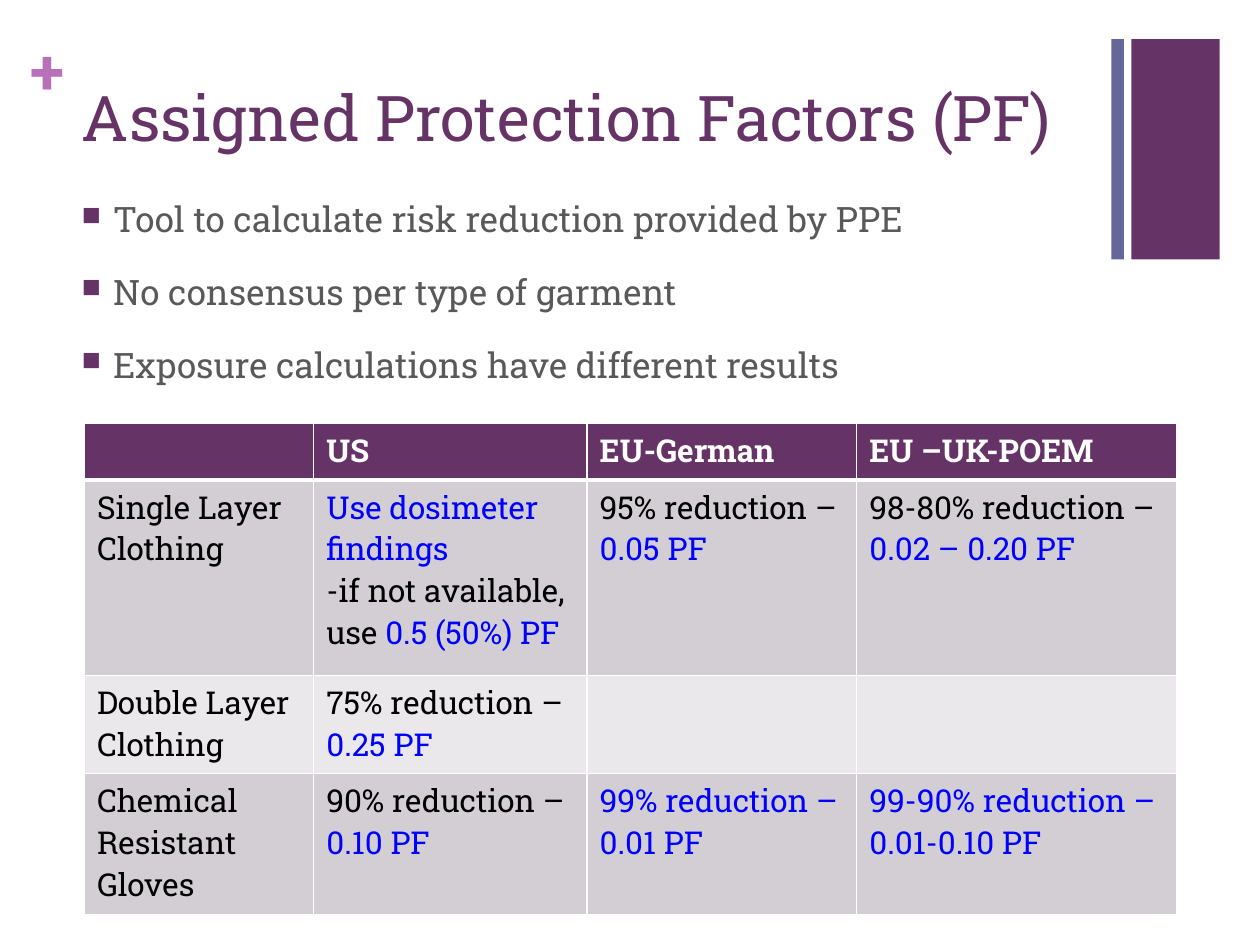
from lxml.etree import SubElement
from pptx import Presentation
from pptx.dml.color import RGBColor as Color
from pptx.enum.shapes import MSO_SHAPE as Shape
from pptx.enum.text import MSO_ANCHOR as Anchor, PP_ALIGN as Align
from pptx.oxml.ns import qn
from pptx.util import Inches, Pt

THEME = dict(
    font="Roboto Slab", purple="663366", slate="666699", orchid="B870B8",
    gray="595959", black="000000", blue="0000FF", white="FFFFFF",
    band_dark="D3CED3", band_light="EAE8EA",
    title=36, bullet=20, cell=18,
)

# Content: a cell is a list of paragraphs, a paragraph a list of (text, colour)
TITLE = "Assigned Protection Factors (PF)"
BULLETS = [
    "Tool to calculate risk reduction provided by PPE",
    "No consensus per type of garment",
    "Exposure calculations have different results",
]
HEADERS = ["", "US", "EU-German", "EU –UK-POEM"]
ROWS = [
    [
        [[("Single Layer Clothing", "black")]],
        [[("Use dosimeter findings", "blue")],
         [("-if not available, use ", "black"), ("0.5 (50%) PF", "blue")]],
        [[("95% reduction – ", "black"), ("0.05 PF", "blue")]],
        [[("98-80% reduction – ", "black"), ("0.02 – 0.20 PF", "blue")]],
    ],
    [
        [[("Double Layer Clothing", "black")]],
        [[("75% reduction – ", "black"), ("0.25 PF", "blue")]],
        [],
        [],
    ],
    [
        [[("Chemical Resistant Gloves", "black")]],
        [[("90% reduction – ", "black"), ("0.10 PF", "blue")]],
        [[("99% reduction – 0.01 PF", "blue")]],
        [[("99-90% reduction – 0.01-0.10 PF", "blue")]],
    ],
]
COLUMN_WIDTHS = [1.82, 2.17, 2.14, 2.54]
ROW_HEIGHTS = [0.45, 1.55, 0.78, 1.12]
BARS = [(8.98, 0.7, "purple"), (8.82, 0.1, "slate")]  # left, width, colour


def color(name):
    return Color.from_string(THEME[name])


def add_text(para, text, size, fill, bold=False):
    para.alignment = Align.LEFT
    span = para.add_run()
    span.text = text
    span.font.name = THEME["font"]
    span.font.size = Pt(size)
    span.font.bold = bold
    span.font.color.rgb = color(fill)


def add_box(page, left, top, width, height, margin=None):
    box = page.shapes.add_textbox(*map(Inches, (left, top, width, height)))
    frame = box.text_frame
    frame.word_wrap = True
    if margin is not None:
        frame.margin_left = frame.margin_right = Inches(margin)
        frame.margin_top = frame.margin_bottom = Inches(margin)
    return frame


def add_bullet(para):
    props = para._p.get_or_add_pPr()
    props.set("marL", str(Inches(0.25)))
    props.set("indent", str(-Inches(0.25)))
    fill = SubElement(props, qn("a:buClr"))
    SubElement(fill, qn("a:srgbClr"), val=THEME["purple"])
    SubElement(props, qn("a:buSzPct"), val="75000")
    SubElement(props, qn("a:buChar"), char="■")


def style_cell(cell, fill, top=1, bottom=1):
    cell.fill.solid()
    cell.fill.fore_color.rgb = color(fill)
    props = cell._tc.get_or_add_tcPr()
    sides = {"a:lnL": 1, "a:lnR": 1, "a:lnT": top, "a:lnB": bottom}
    for place, (tag, points) in enumerate(sides.items()):
        line = SubElement(props, qn(tag), w=str(Pt(points)))
        solid = SubElement(line, qn("a:solidFill"))
        SubElement(solid, qn("a:srgbClr"), val=THEME["white"])
        props.insert(place, line)


def fill_cell(cell, paragraphs, bold=False):
    frame = cell.text_frame
    for number, spans in enumerate(paragraphs):
        para = frame.add_paragraph() if number else frame.paragraphs[0]
        for text, fill in spans:
            add_text(para, text, THEME["cell"], fill, bold)


def add_factor_table(page):
    table = page.shapes.add_table(
        len(ROW_HEIGHTS), len(COLUMN_WIDTHS), Inches(0.67), Inches(3.36),
        Inches(sum(COLUMN_WIDTHS)), Inches(sum(ROW_HEIGHTS))).table
    for column, width in zip(table.columns, COLUMN_WIDTHS):
        column.width = Inches(width)
    for row, height in zip(table.rows, ROW_HEIGHTS):
        row.height = Inches(height)

    for index, header in enumerate(HEADERS):
        cell = table.cell(0, index)
        style_cell(cell, "purple", bottom=3)
        fill_cell(cell, [[(header, "white")]] if header else [], bold=True)
    for number, row in enumerate(ROWS, start=1):
        band = "band_dark" if number % 2 else "band_light"
        for index, paragraphs in enumerate(row):
            cell = table.cell(number, index)
            style_cell(cell, band, top=3 if number == 1 else 1)
            fill_cell(cell, paragraphs)


def main():
    deck = Presentation()
    deck.slide_width, deck.slide_height = Inches(10), Inches(7.5)
    page = deck.slides.add_slide(deck.slide_layouts[5])

    # Corner decoration
    for left, width, fill in BARS:
        bar = page.shapes.add_shape(
            Shape.RECTANGLE, *map(Inches, (left, 0.31, width, 1.75)))
        bar.shadow.inherit = False
        bar.fill.solid()
        bar.fill.fore_color.rgb = color(fill)
        bar.line.fill.background()
    plus = add_box(page, 0.24, 0.25, 0.29, 0.61, margin=0)
    add_text(plus.paragraphs[0], "+", THEME["title"], "orchid", bold=True)

    # Title
    title = page.shapes.title
    title.left, title.top = Inches(0.55), Inches(0.53)
    title.width, title.height = Inches(8.26), Inches(0.78)
    title.text_frame.vertical_anchor = Anchor.MIDDLE
    add_text(title.text_frame.paragraphs[0], TITLE, THEME["title"], "purple")

    # Bullets
    body = add_box(page, 0.55, 1.52, 8.26, 1.75)
    for number, text in enumerate(BULLETS):
        para = body.add_paragraph() if number else body.paragraphs[0]
        add_bullet(para)
        if number:
            para.space_before = Pt(17.6)
        add_text(para, text, THEME["bullet"], "gray")

    # Protection factors by region
    add_factor_table(page)
    deck.save("out.pptx")


if __name__ == "__main__":
    main()
